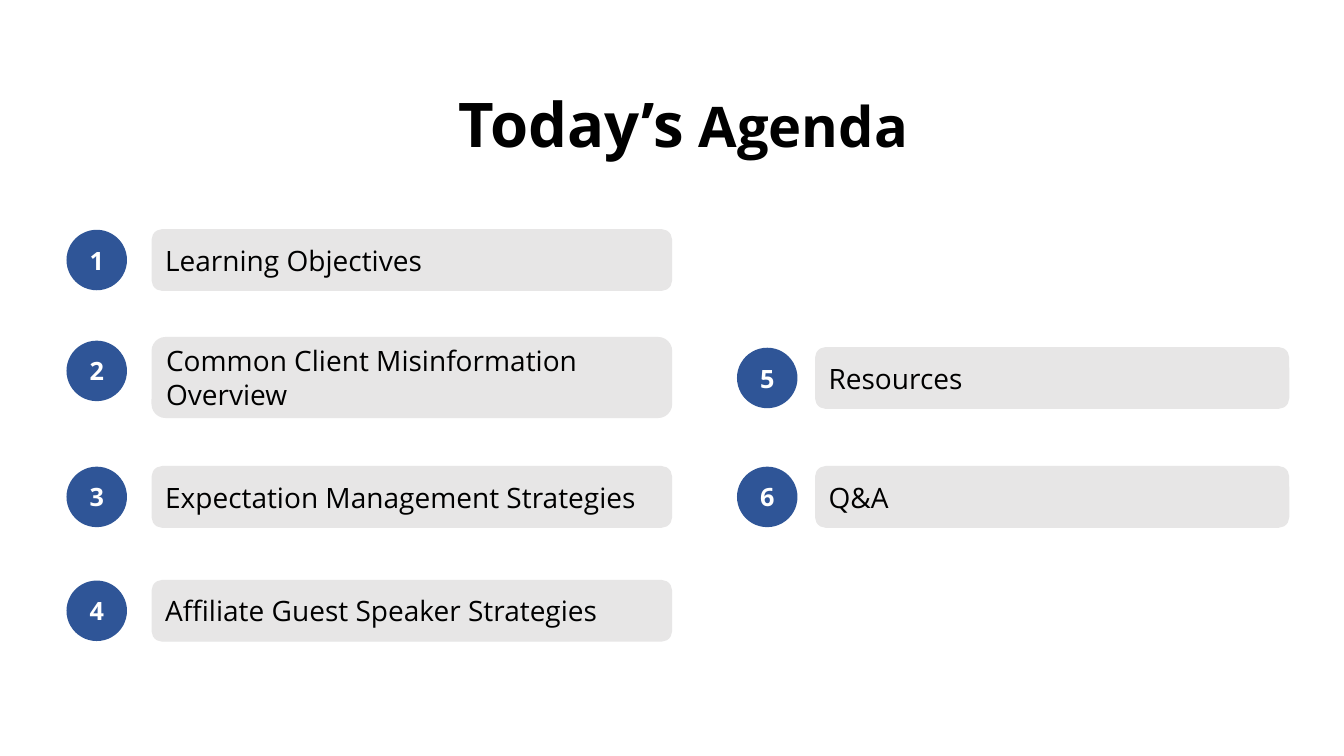
"""Build the numbered agenda slide in two columns."""
from pptx import Presentation
from pptx.dml.color import RGBColor as RGB
from pptx.enum.shapes import MSO_SHAPE as Shape
from pptx.enum.text import MSO_ANCHOR as Anchor, MSO_AUTO_SIZE as Fit, PP_ALIGN as Align
from pptx.util import Inches, Pt

COLORS = {"blue": "2F5597", "gray": "E7E6E6", "black": "000000", "white": "FFFFFF"}
FONT = "Open Sans"
SIDE = 0.6


def style(run, size, color, bold=False):
    run.font.name = FONT
    run.font.size = Pt(size)
    run.font.bold = bold
    run.font.color.rgb = RGB.from_string(COLORS[color])


def add_box(kind, left, top, width, height, fill, text, align, size, color, bold):
    box = slide.shapes.add_shape(kind, Inches(left), Inches(top), Inches(width), Inches(height))
    box.shadow.inherit = False
    box.fill.solid()
    box.fill.fore_color.rgb = RGB.from_string(COLORS[fill])
    frame = box.text_frame
    frame.word_wrap = True
    frame.vertical_anchor = Anchor.MIDDLE
    frame.text = text
    line = frame.paragraphs[0]
    line.alignment = align
    style(line.runs[0], size, color, bold)
    return box


deck = Presentation()
deck.slide_width, deck.slide_height = Inches(13.33), Inches(7.5)
slide = deck.slides.add_slide(deck.slide_layouts[6])

title = slide.shapes.add_textbox(Inches(4.45), Inches(0.8), Inches(7.28), Inches(0.84))
title.text_frame.word_wrap = True
title.text_frame.auto_size = Fit.SHAPE_TO_FIT_TEXT
for text, size in [("Today’s", 44), (" Agenda", 40)]:
    run = title.text_frame.paragraphs[0].add_run()
    run.text = text
    style(run, size, "black", True)

left_col = (0.66, 1.51, 5.15)
right_col = (7.31, 8.09, 4.69)
topics = [
    ("Learning Objectives", left_col, 2.28, 2.28, SIDE),
    ("Common Client Misinformation Overview", left_col, 3.38, 3.35, 0.79),
    ("Expectation Management Strategies", left_col, 4.63, 4.63, SIDE),
    ("Affiliate Guest Speaker Strategies", left_col, 5.76, 5.76, SIDE),
    ("Resources", right_col, 3.45, 3.45, SIDE),
    ("Q&A", right_col, 4.63, 4.63, SIDE),
]
for number, (topic, column, dot_top, bar_top, height) in enumerate(topics, 1):
    dot_left, bar_left, width = column
    dot = add_box(Shape.OVAL, dot_left, dot_top, SIDE, SIDE, "blue",
                  str(number), Align.CENTER, 18, "white", True)
    dot.line.fill.background()
    bar = add_box(Shape.ROUNDED_RECTANGLE, bar_left, bar_top, width, height, "gray",
                  topic, Align.LEFT, 20, "black", False)
    bar.line.color.rgb = RGB.from_string(COLORS["gray"])
    bar.line.width = Pt(1)

deck.save("out.pptx")
